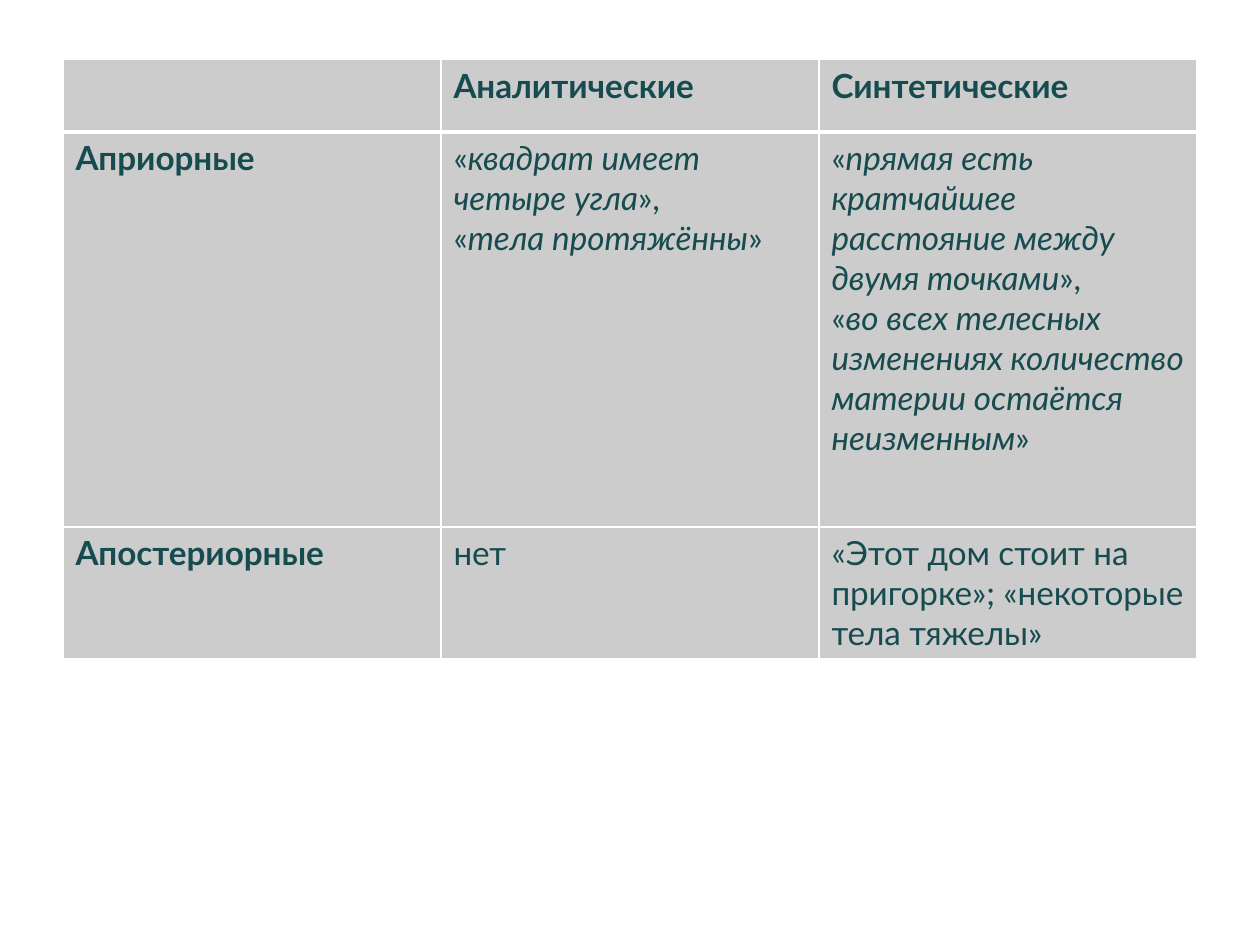
import lxml.etree
import pptx
import pptx.dml.color
import pptx.oxml.ns
import pptx.util

PX = 914400 // 126
COLORS = {"cell": "CCCCCC", "border": "FFFFFF", "text": "164B4F"}


def write_text(cell, text, size=19, bold=False, font="Lato", color="text"):
    """Fill a cell; parts between asterisks are italic, newlines break the line."""
    para = cell.text_frame.paragraphs[0]
    for index, part in enumerate(text.split("*")):
        for number, line in enumerate(part.split("\n")):
            if number:
                para.add_line_break()
            if line:
                span = para.add_run()
                span.text = line
                span.font.name = font
                span.font.size = pptx.util.Pt(size)
                span.font.bold = bold
                span.font.italic = index % 2 == 1
                span.font.color.rgb = pptx.dml.color.RGBColor.from_string(COLORS[color])


def set_border(cell, side, width):
    properties = cell._tc.get_or_add_tcPr()
    line = lxml.etree.SubElement(properties, pptx.oxml.ns.qn("a:ln" + side),
                                 w=str(pptx.util.Pt(width)))
    fill = lxml.etree.SubElement(line, pptx.oxml.ns.qn("a:solidFill"))
    lxml.etree.SubElement(fill, pptx.oxml.ns.qn("a:srgbClr"), val=COLORS["border"])


deck = pptx.Presentation()
deck.slide_width = 1260 * PX
deck.slide_height = 945 * PX
page = deck.slides.add_slide(deck.slide_layouts[6])

judgements = [
    ["", "Аналитические", "Синтетические"],
    ["Априорные",
     "«*квадрат имеет четыре угла*», \n«*тела протяжённы*»",
     "«*прямая есть кратчайшее расстояние между двумя точками*», \n"
     "«*во всех телесных изменениях количество материи остаётся неизменным*»"],
    ["Апостериорные", "нет",
     "«Этот дом стоит на пригорке»; «некоторые тела тяжелы»"],
]
row_heights = [73, 395, 131]
column_width = 378

table = page.shapes.add_table(3, 3, 63 * PX, 59 * PX, 3 * column_width * PX,
                              sum(row_heights) * PX).table
for column in table.columns:
    column.width = column_width * PX

for row, height in enumerate(row_heights):
    table.rows[row].height = height * PX
    for column, text in enumerate(judgements[row]):
        cell = table.cell(row, column)
        for side in "LRTB":
            under_header = (row, side) in [(0, "B"), (1, "T")]
            set_border(cell, side, 3 if under_header else 1)
        cell.fill.solid()
        cell.fill.fore_color.rgb = pptx.dml.color.RGBColor.from_string(COLORS["cell"])
        write_text(cell, text, bold=row == 0 or column == 0)

deck.save("out.pptx")
